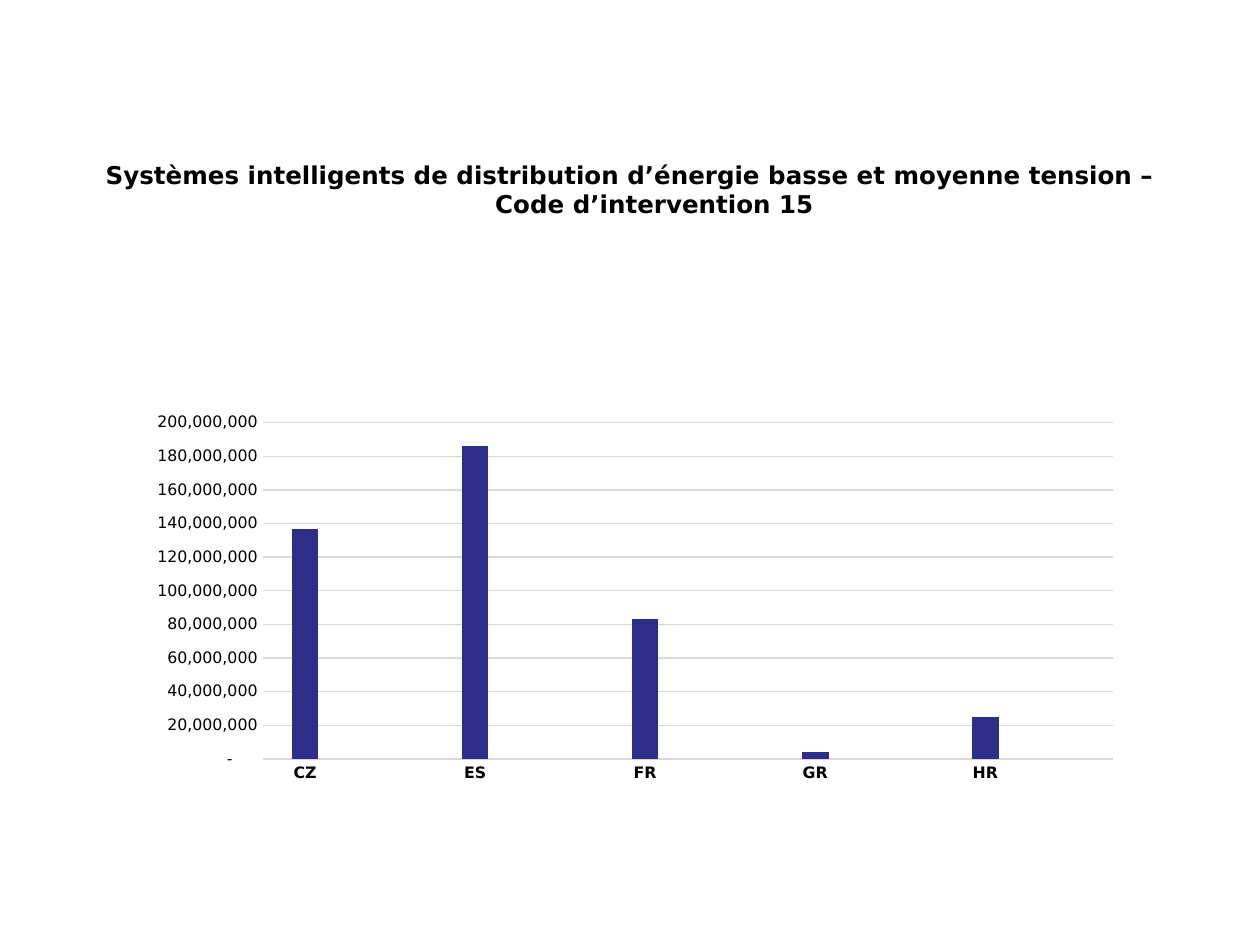
from lxml import etree
from pptx import Presentation
from pptx.chart.data import CategoryChartData
from pptx.dml.color import RGBColor
from pptx.enum.chart import XL_CHART_TYPE, XL_TICK_MARK
from pptx.enum.text import MSO_ANCHOR, MSO_AUTO_SIZE, PP_ALIGN
from pptx.oxml.ns import qn
from pptx.util import Pt

COLUMNS = XL_CHART_TYPE.COLUMN_CLUSTERED
NO_TICK = XL_TICK_MARK.NONE
MIDDLE = MSO_ANCHOR.MIDDLE
NO_FIT = MSO_AUTO_SIZE.NONE
CENTER = PP_ALIGN.CENTER

COLORS = {"text": "000000", "grid": "D9D9D9", "bar": "2D2D8A"}
COUNTRY_MILLIONS = {"CZ": 137, "ES": 186, "FR": 83, "GR": 4, "HR": 25}


class EnergySlide:
    """Holds the style and the current slide, and draws its elements."""

    font_name = "DejaVu Sans"

    def __init__(self, deck):
        self.slide = deck.slides.add_slide(deck.slide_layouts[5])

    def color(self, key):
        return RGBColor.from_string(COLORS[key])

    def style_font(self, font, size, bold=False):
        font.name = self.font_name
        font.size = Pt(size)
        font.bold = bold
        font.color.rgb = self.color("text")

    def style_line(self, line):
        line.color.rgb = self.color("grid")
        line.width = Pt(0.75)

    def add_title(self, wording, left, top, width, height, hanging):
        title = self.slide.shapes.title
        title.left, title.top = Pt(left), Pt(top)
        title.width, title.height = Pt(width), Pt(height)
        frame = title.text_frame
        frame.word_wrap = True
        frame.auto_size = NO_FIT
        frame.vertical_anchor = MIDDLE
        heading = frame.paragraphs[0]
        heading.alignment = CENTER
        properties = heading._p.get_or_add_pPr()
        properties.set("marL", str(Pt(hanging)))
        properties.set("indent", str(-Pt(hanging)))
        run = heading.add_run()
        run.text = wording
        self.style_font(run.font, 14, bold=True)

    def add_columns(self, amounts, left, top, width, height, plot_area):
        funding = CategoryChartData(number_format="#,##0")
        values = []
        for country, millions in amounts.items():
            funding.add_category(country)
            funding.add_category("")
            values += [millions * 1_000_000, None]
        funding.add_series("Series 1", values)
        chart = self.slide.shapes.add_chart(
            COLUMNS, Pt(left), Pt(top), Pt(width), Pt(height), funding
        ).chart
        chart.has_legend = False
        chart.has_title = False
        self.style_font(chart.font, 10)

        plot = chart.plots[0]
        plot.gap_width = 219
        plot.overlap = -27
        plot.vary_by_categories = False
        bars = plot.series[0].format.fill
        bars.solid()
        bars.fore_color.rgb = self.color("bar")

        countries, euros = chart.category_axis, chart.value_axis
        for axis, bold in ((countries, True), (euros, False)):
            axis.major_tick_mark = axis.minor_tick_mark = NO_TICK
            self.style_font(axis.tick_labels.font, 9, bold)
        self.style_line(countries.format.line)
        euros.format.line.fill.background()
        euros.has_major_gridlines = True
        self.style_line(euros.major_gridlines.format.line)
        euros.minimum_scale = 0
        euros.maximum_scale = 200_000_000
        euros.major_unit = 20_000_000
        euros.tick_labels.number_format = '#,##0;-#,##0;"-"??_-'
        euros.tick_labels.number_format_is_linked = False
        self.place_plot(chart, plot_area)

    def place_plot(self, chart, plot_area):
        area = chart._chartSpace.find(".//" + qn("c:plotArea"))
        for old_layout in area.findall(qn("c:layout")):
            area.remove(old_layout)
        layout = etree.Element(qn("c:layout"))
        manual = etree.SubElement(layout, qn("c:manualLayout"))
        settings = [("layoutTarget", "inner"), ("xMode", "edge"), ("yMode", "edge")]
        settings += zip("xywh", plot_area)
        for tag, value in settings:
            etree.SubElement(manual, qn(f"c:{tag}")).set("val", str(value))
        area.insert(0, layout)


def main():
    deck = Presentation()
    deck.slide_width, deck.slide_height = Pt(720), Pt(540)
    energy = EnergySlide(deck)
    energy.add_title(
        "Systèmes intelligents de distribution d’énergie basse et moyenne tension "
        "– Code d’intervention 15",
        36, 71.5, 648, 73.5, hanging=28,
    )
    energy.add_columns(
        COUNTRY_MILLIONS, 36, 179.5, 648, 286, plot_area=(0.176, 0.217, 0.75, 0.672)
    )
    deck.save("out.pptx")


if __name__ == "__main__":
    main()
